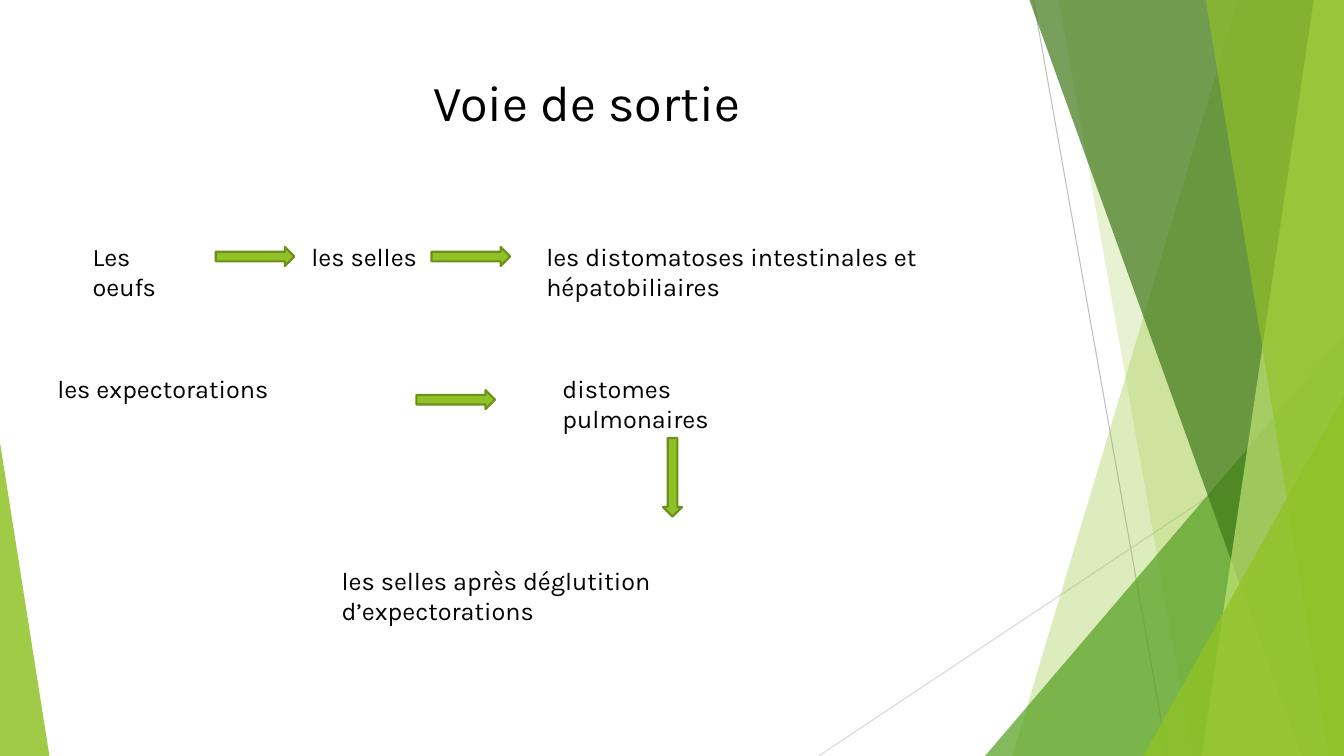
import pptx
import pptx.util
import pptx.dml.color
import pptx.enum.shapes
import pptx.enum.text
import pptx.oxml
import pptx.oxml.ns

WIDTH, HEIGHT = 13.33, 7.5
FONT = "Karla"
GREEN, OUTLINE = "90C226", "6B901C"
ARROW_LENGTH, ARROW_THICKNESS = 0.78, 0.19
LABEL_HEIGHT = 0.4

TITLE = ("Voie de sortie", 4.2, 0.66, 3.35, 0.71)

ROWS = {"eggs": 2.34, "sputum": 3.65, "swallowed": 5.56}
LABELS = [
    ("Les oeufs", "eggs", 0.82, 1.24),
    ("les selles", "eggs", 2.99, 1.36),
    ("les distomatoses intestinales et hépatobiliaires", "eggs", 5.32, 5.47),
    ("les expectorations", "sputum", 0.47, 2.33),
    ("distomes pulmonaires", "sputum", 5.48, 2.71),
    ("les selles après déglutition d’expectorations", "swallowed", 3.29, 5.16),
]
ARROWS = [
    (2.14, 2.45, 0),
    (4.28, 2.45, 0),
    (4.13, 3.87, 0),
    (6.28, 4.64, 90),
]

RAYS = [
    ((10.25, 0), (11.58, HEIGHT), "BFBFBF"),
    ((WIDTH, 4.03), (8.12, HEIGHT), "D9D9D9"),
]
FACETS = [
    ("band", 12.28, 10.04, GREEN, 30),
    ("band", 10.5, 11.83, GREEN, 20),
    ("corner", 9.77, 3.33, "54A021", 72),
    ("band", 10.21, 12.91, "3F7819", 70),
    ("band", 13.03, 11.92, "C0E474", 70),
    ("band", 11.96, 13.18, GREEN, 65),
    ("corner", 11.34, 3.93, GREEN, 80),
]
LEFT_CORNER = (0.49, 4.39, GREEN, 85)

inch = pptx.util.Inches
SHAPES = pptx.enum.shapes.MSO_SHAPE


def colour(value):
    return pptx.dml.color.RGBColor.from_string(value)


def paint(shape, fill, opacity=100, outline=None):
    shape.shadow.inherit = False
    shape.fill.solid()
    shape.fill.fore_color.rgb = colour(fill)
    if opacity < 100:
        tint = shape.fill._xPr.find(".//" + pptx.oxml.ns.qn("a:srgbClr"))
        alpha = pptx.oxml.parse_xml(
            f'<a:alpha {pptx.oxml.ns.nsdecls("a")} val="{opacity * 1000}"/>')
        tint.append(alpha)
    if outline:
        shape.line.color.rgb = colour(outline)
        shape.line.width = pptx.util.Pt(1.5)
    else:
        shape.line.fill.background()


def write(box, text, size=18, ink="000000"):
    frame = box.text_frame
    frame.word_wrap = True
    frame.auto_size = pptx.enum.text.MSO_AUTO_SIZE.SHAPE_TO_FIT_TEXT
    frame.vertical_anchor = pptx.enum.text.MSO_ANCHOR.TOP
    frame.text = text
    paragraph = frame.paragraphs[0]
    paragraph.alignment = pptx.enum.text.PP_ALIGN.LEFT
    font = paragraph.runs[0].font
    font.name, font.size = FONT, pptx.util.Pt(size)
    font.color.rgb = colour(ink)


def add_ray(slide, start, end, ink):
    ray = slide.shapes.add_connector(
        pptx.enum.shapes.MSO_CONNECTOR.STRAIGHT, *map(inch, start + end))
    ray.line.color.rgb = colour(ink)
    ray.line.width = pptx.util.Pt(0.75)
    ray._element.spPr.append(pptx.oxml.parse_xml(
        f'<a:effectLst {pptx.oxml.ns.nsdecls("a")}/>'))


def add_band(slide, top_x, bottom_x, fill, opacity):
    outline = slide.shapes.build_freeform(inch(top_x), 0)
    outline.add_line_segments([
        (inch(x), inch(y))
        for x, y in ((WIDTH, 0), (WIDTH, HEIGHT), (bottom_x, HEIGHT))
    ])
    paint(outline.convert_to_shape(), fill, opacity)


def add_corner(slide, left, right, top, apex, fill, opacity):
    corner = slide.shapes.add_shape(
        SHAPES.ISOSCELES_TRIANGLE, inch(left), inch(top),
        inch(right - left), inch(HEIGHT - top))
    corner.adjustments[0] = apex
    paint(corner, fill, opacity)


def main():
    deck = pptx.Presentation()
    deck.slide_width, deck.slide_height = inch(WIDTH), inch(HEIGHT)
    slide = deck.slides.add_slide(deck.slide_layouts[5])

    for ray in RAYS:
        add_ray(slide, *ray)
    for kind, start, end, fill, opacity in FACETS:
        if kind == "band":
            add_band(slide, start, end, fill, opacity)
        else:
            add_corner(slide, start, WIDTH, end, 1, fill, opacity)
    right, top, fill, opacity = LEFT_CORNER
    add_corner(slide, 0, right, top, 0, fill, opacity)

    heading, *place = TITLE
    title = slide.shapes.title
    title.left, title.top, title.width, title.height = map(inch, place)
    write(title, heading, size=36)

    for text, row, left, width in LABELS:
        label = slide.shapes.add_textbox(
            inch(left), inch(ROWS[row]), inch(width), inch(LABEL_HEIGHT))
        write(label, text)

    for left, top, turn in ARROWS:
        arrow = slide.shapes.add_shape(
            SHAPES.RIGHT_ARROW, inch(left), inch(top),
            inch(ARROW_LENGTH), inch(ARROW_THICKNESS))
        arrow.rotation = turn
        paint(arrow, GREEN, outline=OUTLINE)

    deck.save("out.pptx")


if __name__ == "__main__":
    main()
